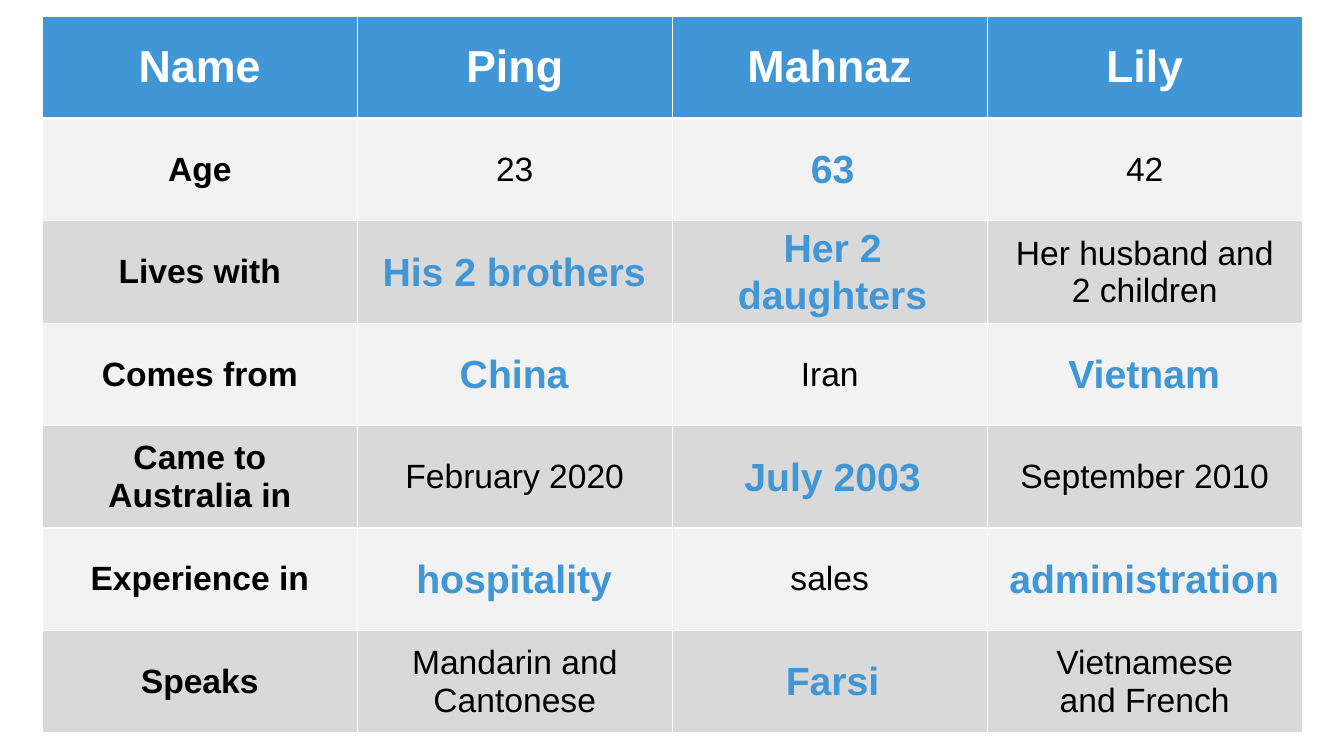
from lxml import etree
from pptx import Presentation
from pptx.dml.color import RGBColor
from pptx.enum import text
from pptx.oxml import ns
from pptx.util import Pt

# Content: cells left empty are filled by the answers
ROWS = [
    ("Name", "Ping", "Mahnaz", "Lily"),
    ("Age", "23", "", "42"),
    ("Lives with", "", "", "Her husband and\n2 children"),
    ("Comes from", "", "Iran", ""),
    ("Came to\nAustralia in", "February 2020", "", "September 2010"),
    ("Experience in", "", "sales", ""),
    ("Speaks", "Mandarin and Cantonese", "", "Vietnamese\nand French"),
]
# (row, column, answer, lines)
ANSWERS = [
    (2, 1, "His 2 brothers", 1),
    (3, 1, "China", 1),
    (5, 1, "hospitality", 1),
    (1, 2, "63", 1),
    (2, 2, "Her 2 daughters", 2),
    (4, 2, "July 2003", 1),
    (6, 2, "Farsi", 1),
    (3, 3, "Vietnam", 1),
    (5, 3, "administration", 1),
]
BLUE, WHITE, BLACK = "4196D5", "FFFFFF", "000000"
BANDS = ("D9D9D9", "F2F2F2")

# Layout in points
LEFT, TOP, COLUMN_WIDTH, ROW_HEIGHT = 30.2, 11.5, 225, 73.14
ANSWER_LEFTS = {1: 254.2, 2: 481.7, 3: 704.2}
ANSWER_WIDTH, LINE_HEIGHT, ANSWER_PADDING = 226, 33.7, 7.5


def color(value):
    return RGBColor.from_string(value)


def write(frame, content, size, font_color, bold):
    frame.text = content
    for paragraph in frame.paragraphs:
        paragraph.alignment = text.PP_ALIGN.CENTER
        paragraph.font.name = "Arial"
        paragraph.font.size = Pt(size)
        paragraph.font.bold = bold
        paragraph.font.color.rgb = color(font_color)


def add_borders(cell, widths):
    properties = cell._tc.get_or_add_tcPr()
    for index, (side, width) in enumerate(widths.items()):
        line = etree.Element(ns.qn(f"a:{side}"), w=str(Pt(width)))
        fill = etree.SubElement(line, ns.qn("a:solidFill"))
        etree.SubElement(fill, ns.qn("a:srgbClr"), val=WHITE)
        properties.insert(index, line)


def add_profile_table(slide):
    table = slide.shapes.add_table(
        len(ROWS), len(ROWS[0]), Pt(LEFT), Pt(TOP),
        Pt(COLUMN_WIDTH * len(ROWS[0])), Pt(ROW_HEIGHT * len(ROWS))).table
    for column in table.columns:
        column.width = Pt(COLUMN_WIDTH)
    for r, values in enumerate(ROWS):
        table.rows[r].height = Pt(ROW_HEIGHT)
        for c, value in enumerate(values):
            cell = table.cell(r, c)
            header = r == 0
            cell.fill.solid()
            cell.fill.fore_color.rgb = color(BLUE if header else BANDS[r % 2])
            cell.vertical_anchor = text.MSO_ANCHOR.MIDDLE
            write(cell.text_frame, value, 32 if header else 24,
                  WHITE if header else BLACK, header or c == 0)
            add_borders(cell, {"lnL": 1, "lnR": 1, "lnT": 3 if r == 1 else 1,
                               "lnB": 3 if header else 1})


def add_answer(slide, row, column, answer, lines):
    # Centre each answer on its row
    height = LINE_HEIGHT * lines + ANSWER_PADDING
    middle = TOP + ROW_HEIGHT * (row + 0.5) - 0.8
    shape = slide.shapes.add_textbox(
        Pt(ANSWER_LEFTS[column]), Pt(middle - height / 2),
        Pt(ANSWER_WIDTH), Pt(height))
    shape.text_frame.word_wrap = True
    shape.text_frame.auto_size = text.MSO_AUTO_SIZE.SHAPE_TO_FIT_TEXT
    write(shape.text_frame, answer, 28, BLUE, True)


def main():
    presentation = Presentation()
    presentation.slide_width, presentation.slide_height = Pt(960), Pt(540)
    slide = presentation.slides.add_slide(presentation.slide_layouts[6])
    add_profile_table(slide)
    for answer in ANSWERS:
        add_answer(slide, *answer)
    presentation.save("out.pptx")


if __name__ == "__main__":
    main()
